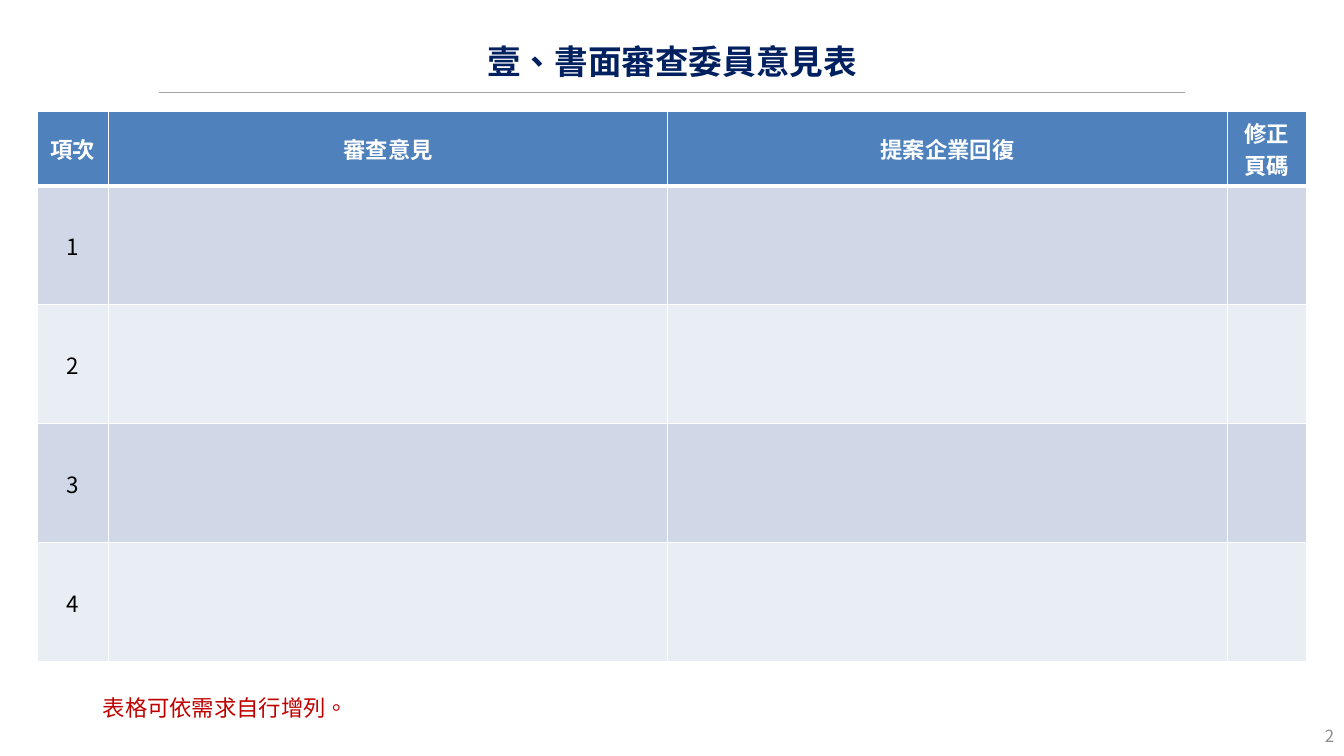
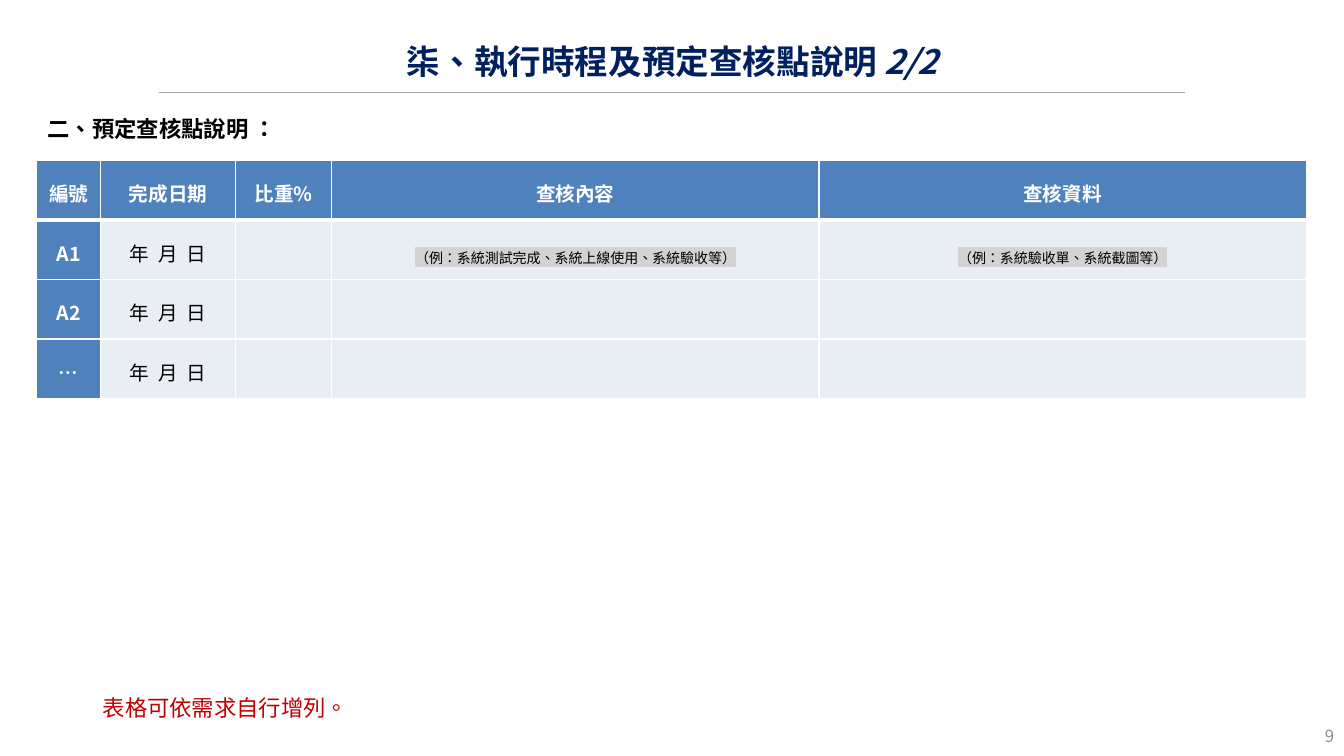
"""Builds a review-comment page and a checkpoint page that share one layout."""
from dataclasses import dataclass, replace

from lxml.etree import SubElement
from pptx import Presentation
from pptx.dml.color import RGBColor
from pptx.enum.shapes import MSO_CONNECTOR as Connector
from pptx.enum.text import MSO_ANCHOR as Anchor, MSO_AUTO_SIZE as AutoSize, PP_ALIGN as Align
from pptx.oxml import parse_xml
from pptx.oxml.ns import nsdecls, qn
from pptx.util import Cm, Pt

FONT = "Noto Sans CJK SC"
LANGUAGE = "zh-TW"
NAVY = RGBColor(0x00, 0x20, 0x60)
BLUE = RGBColor(0x4F, 0x81, 0xBD)
BAND_DARK = RGBColor(0xD0, 0xD8, 0xE8)
BAND_LIGHT = RGBColor(0xE9, 0xED, 0xF4)
HIGHLIGHT = RGBColor(0xD3, 0xD3, 0xD3)
RULE_GREY = RGBColor(0xA6, 0xA6, 0xA6)
NUMBER_GREY = RGBColor(0x8C, 0x8C, 0x8C)
RED = RGBColor(0xC0, 0x00, 0x00)
WHITE = RGBColor(0xFF, 0xFF, 0xFF)
BLACK = RGBColor(0x00, 0x00, 0x00)


@dataclass(frozen=True)
class Style:
    """Look of one run of text."""
    size: int
    color: RGBColor
    bold: bool = False
    italic: bool = False
    highlight: RGBColor | None = None


TITLE = Style(24, NAVY, bold=True)
TITLE_PART = replace(TITLE, italic=True)
NOTE = Style(16, RED)
SUBTITLE = Style(16, BLACK, bold=True)
PAGE_NUMBER = Style(12, NUMBER_GREY)
REVIEW_HEAD = Style(16, WHITE, bold=True)
REVIEW_BODY = Style(16, BLACK)
CHECK_HEAD = Style(14, WHITE, bold=True)
CHECK_BODY = Style(14, BLACK)
EXAMPLE = Style(10, BLACK, highlight=HIGHLIGHT)


def add_span(para, text, style):
    """Add one formatted run to a paragraph."""
    span = para.add_run()
    span.text = text
    font = span.font
    font.size, font.bold, font.italic = Pt(style.size), style.bold, style.italic
    font.color.rgb = style.color
    font.name = FONT
    font._element.set("lang", LANGUAGE)
    latin = font._element.find(qn("a:latin"))
    latin.addnext(parse_xml(f'<a:ea {nsdecls("a")} typeface="{FONT}"/>'))
    if style.highlight is not None:
        latin.addprevious(parse_xml(
            f'<a:highlight {nsdecls("a")}><a:srgbClr val="{style.highlight}"/></a:highlight>'))


def prepare_layout(layout):
    """Place the shared title on the layout."""
    title = layout.placeholders[0]
    title.left, title.top, title.width, title.height = Cm(5.74), Cm(0.79), Cm(22.4), Cm(1.5)


def add_title_rule(page):
    """Draw the grey line below the title."""
    rule = page.shapes.add_connector(Connector.STRAIGHT, Cm(4), Cm(2.33), Cm(29.87), Cm(2.33))
    rule.line.color.rgb = RULE_GREY
    rule.line.width = Pt(0.75)
    SubElement(rule.element.spPr, qn("a:effectLst"))


def add_text(page, text, style, left, top, width):
    """Add a one-line text box with fixed line spacing."""
    box = page.shapes.add_textbox(left, top, width, Cm(0.89))
    frame = box.text_frame
    frame.word_wrap = True
    frame.auto_size = AutoSize.SHAPE_TO_FIT_TEXT
    para = frame.paragraphs[0]
    para.line_spacing, para.space_after = Pt(18), Pt(6)
    add_span(para, text, style)


def add_page_number(page, number):
    """Add the page number in the bottom right corner."""
    box = page.shapes.add_textbox(Cm(32.17), Cm(18.03), Cm(1.7), Cm(1.02))
    frame = box.text_frame
    frame.word_wrap = True
    frame.vertical_anchor = Anchor.MIDDLE
    para = frame.paragraphs[0]
    para.alignment = Align.RIGHT
    add_span(para, str(number), PAGE_NUMBER)


def add_page(deck, number, *title_parts):
    """Add a page with title, rule, table note and page number."""
    page = deck.slides.add_slide(deck.slide_layouts[5])
    add_title_rule(page)
    frame = page.shapes.title.text_frame
    frame.vertical_anchor = Anchor.MIDDLE
    para = frame.paragraphs[0]
    para.alignment = Align.CENTER
    for text, style in title_parts:
        add_span(para, text, style)
    add_text(page, "表格可依需求自行增列。", NOTE, Cm(2.34), Cm(17.42), Cm(22.38))
    add_page_number(page, number)
    return page


def set_borders(cell, row):
    """Give a cell white borders, thick between the header and the body."""
    widths = {"L": 1, "R": 1, "T": 3 if row == 1 else 1, "B": 3 if row == 0 else 1}
    for side, width in widths.items():
        cell._tc.get_or_add_tcPr().append(parse_xml(
            f'<a:ln{side} {nsdecls("a")} w="{Pt(width)}"><a:solidFill>'
            f'<a:srgbClr val="{WHITE}"/></a:solidFill></a:ln{side}>'))


def fill_cell(cell, row, text, style, fill, compact):
    """Format one table cell and write its text."""
    set_borders(cell, row)
    cell.fill.solid()
    cell.fill.fore_color.rgb = fill
    cell.vertical_anchor = Anchor.MIDDLE
    para = cell.text_frame.paragraphs[0]
    para.alignment = Align.CENTER
    if compact:
        cell.margin_left = cell.margin_right = Cm(0.05)
        cell.margin_top = cell.margin_bottom = 0
        para.line_spacing = Pt(25)
    if text:
        add_span(para, text, style)


def add_grid(page, left, top, widths, heights, rows, look, compact=False):
    """Add a table; look(row, column) gives the text style and fill of a cell."""
    frame = page.shapes.add_table(len(heights), len(widths), left, top, sum(widths), sum(heights))
    table = frame.table
    for column, width in zip(table.columns, widths):
        column.width = width
    for line, height in zip(table.rows, heights):
        line.height = height
    for row, texts in enumerate(rows):
        for column, text in enumerate(texts):
            style, fill = look(row, column)
            fill_cell(table.cell(row, column), row, text, style, fill, compact)


def review_look(row, column):
    """Blue header over alternating bands."""
    if row == 0:
        return REVIEW_HEAD, BLUE
    return REVIEW_BODY, BAND_DARK if row % 2 else BAND_LIGHT


def check_look(row, column):
    """Blue header row and first column, with examples in the last two columns."""
    if row == 0 or column == 0:
        return CHECK_HEAD, BLUE
    return EXAMPLE if column >= 3 else CHECK_BODY, BAND_LIGHT


def add_review_page(deck):
    """Build the page of reviewers' comments."""
    page = add_page(deck, 2, ("壹、書面審查委員意見表", TITLE))
    rows = [["項次", "審查意見", "提案企業回復", "修正頁碼"]]
    rows += [[str(item), "", "", ""] for item in range(1, 5)]
    add_grid(page, Cm(0.95), Cm(2.8), [Cm(1.78), Cm(14.1), Cm(14.1), Cm(2)],
             [Cm(1.88)] + [Cm(3)] * 4, rows, review_look)


def add_check_page(deck):
    """Build the page of planned checkpoints."""
    page = add_page(deck, 9, ("柒、執行時程及預定查核點說明 ", TITLE), ("2/2", TITLE_PART))
    add_text(page, "二、預定查核點說明 ：", SUBTITLE, Cm(0.95), Cm(2.82), Cm(17.42))
    date = "年  月  日"
    rows = [
        ["編號", "完成日期", "比重%", "查核內容", "查核資料"],
        ["A1", date, "", "（例：系統測試完成、系統上線使用、系統驗收等）", "（例：系統驗收單、系統截圖等）"],
        ["A2", date, "", "", ""],
        ["…", date, "", "", ""],
    ]
    add_grid(page, Cm(0.92), Cm(4.04), [Cm(1.62), Cm(3.4), Cm(2.42), Cm(12.28), Cm(12.28)],
             [Cm(1.5)] * 4, rows, check_look, compact=True)


def main():
    """Build and save the deck."""
    deck = Presentation()
    deck.slide_width, deck.slide_height = Cm(33.87), Cm(19.05)
    prepare_layout(deck.slide_layouts[5])
    add_review_page(deck)
    add_check_page(deck)
    deck.save("out.pptx")


if __name__ == "__main__":
    main()
